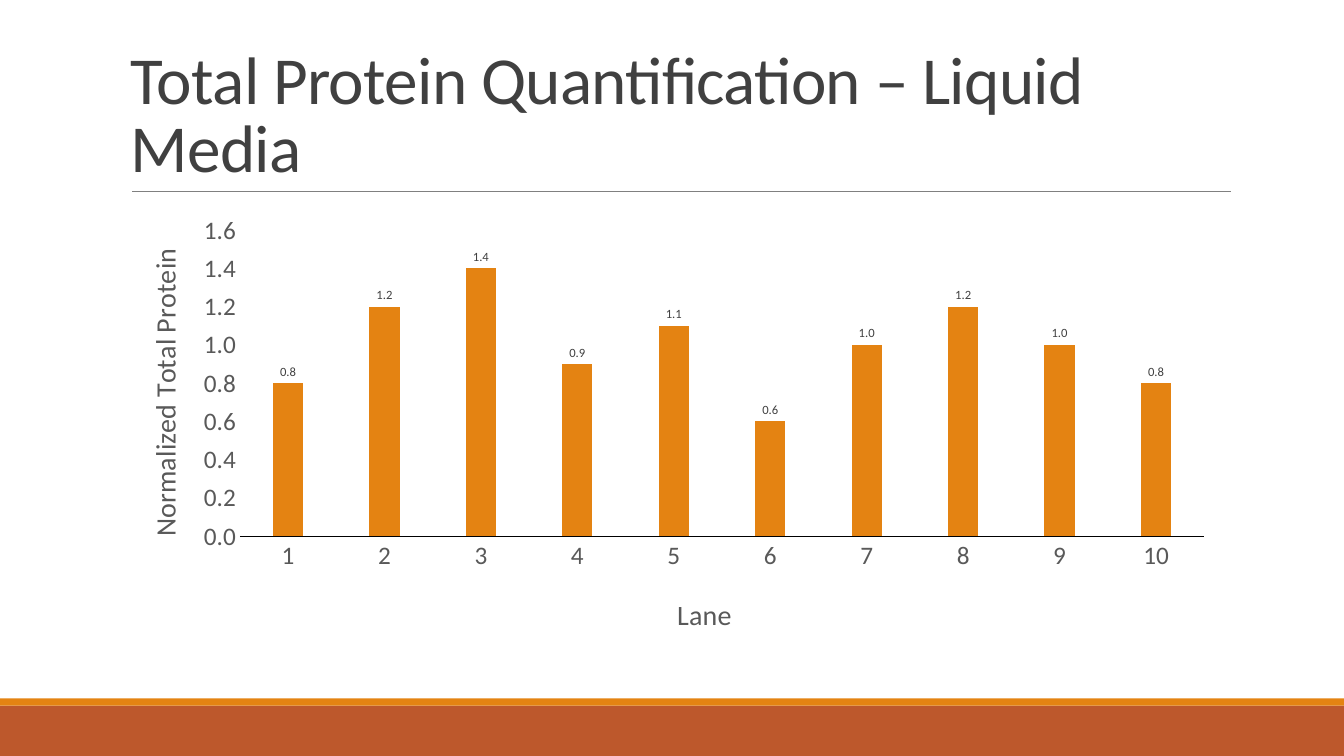
from lxml.etree import SubElement
from pptx import Presentation
from pptx.chart.data import CategoryChartData
from pptx.dml.color import RGBColor
from pptx.enum.chart import XL_CHART_TYPE, XL_LABEL_POSITION, XL_TICK_MARK
from pptx.enum.shapes import MSO_CONNECTOR, MSO_SHAPE
from pptx.enum.text import MSO_ANCHOR
from pptx.oxml import parse_xml
from pptx.oxml.ns import nsdecls, qn
from pptx.util import Cm, Pt

COLORS = {
    "rust": "BD582C",
    "orange": "E48312",
    "rule": "808080",
    "title": "404040",
    "axis": "595959",
    "black": "000000",
}
LANES = [0.8, 1.2, 1.4, 0.9, 1.1, 0.6, 1.0, 1.2, 1.0, 0.8]


def color(name):
    return RGBColor.from_string(COLORS[name])


def style(font, size, name):
    font.name = "Calibri"
    font.size = Pt(size)
    font.bold = False
    font.color.rgb = color(name)


def write(frame, text, size=18, tint="axis", spacing=None, track=None):
    para = frame.paragraphs[0]
    if spacing:
        para.line_spacing = spacing
    run = para.add_run()
    run.text = text
    style(run.font, size, tint)
    if track:
        run.font._element.set("spc", str(track))


def place(node, x, y, w=None, h=None):
    old = node.find(qn("c:layout"))
    if old is not None:
        node.remove(old)
    layout = parse_xml(f"<c:layout {nsdecls('c')}/>")
    manual = SubElement(layout, qn("c:manualLayout"))
    parts = {"xMode": "edge", "yMode": "edge", "x": x, "y": y, "w": w, "h": h}
    if w:
        parts = {"layoutTarget": "inner", **parts}
    for key, value in parts.items():
        if value is not None:
            SubElement(manual, qn(f"c:{key}")).set("val", str(value))
    text = node.find(qn("c:tx"))
    node.insert(0 if text is None else 1, layout)


class Deck:
    def __init__(self, width, height):
        self.file = Presentation()
        self.file.slide_width = Cm(width)
        self.file.slide_height = Cm(height)
        self.slide = self.file.slides.add_slide(self.file.slide_layouts[6])
        self.shapes = self.slide.shapes

    def band(self, box, tint):
        bar = self.shapes.add_shape(MSO_SHAPE.RECTANGLE, *map(Cm, box))
        bar.shadow.inherit = False
        bar.fill.solid()
        bar.fill.fore_color.rgb = color(tint)
        bar.line.fill.background()

    def rule(self, ends, tint, width):
        line = self.shapes.add_connector(MSO_CONNECTOR.STRAIGHT, *map(Cm, ends))
        line.line.color.rgb = color(tint)
        line.line.width = Pt(width)
        SubElement(line._element.spPr, qn("a:effectLst"))

    def text(self, box, text, **format):
        frame = self.shapes.add_textbox(*map(Cm, box)).text_frame
        frame.word_wrap = True
        frame.vertical_anchor = MSO_ANCHOR.BOTTOM
        write(frame, text, **format)

    def axis(self, axis, title, spot, turn=0):
        axis.has_major_gridlines = False
        axis.major_tick_mark = XL_TICK_MARK.NONE
        axis.minor_tick_mark = XL_TICK_MARK.NONE
        style(axis.tick_labels.font, 18, "axis")
        frame = axis.axis_title.text_frame
        write(frame, title, size=20)
        frame._txBody.bodyPr.set("rot", str(turn * 60000))
        place(axis.axis_title._element, *spot)

    def chart(self, box, values):
        data = CategoryChartData(number_format="0.0")
        data.categories = [str(n) for n in range(1, len(values) + 1)]
        data.add_series("Series 1", values)
        chart = self.shapes.add_chart(
            XL_CHART_TYPE.COLUMN_CLUSTERED, *map(Cm, box), data
        ).chart
        chart.has_legend = False
        chart.has_title = False
        style(chart.font, 10, "black")
        place(chart._chartSpace.chart.plotArea, 0.11, 0.06, 0.87, 0.69)

        lane, level = chart.category_axis, chart.value_axis
        self.axis(lane, "Lane", (0.5, 0.87))
        self.axis(level, "Normalized Total Protein", (0.02, 0.09), turn=-90)
        lane.format.line.color.rgb = color("black")
        lane.format.line.width = Pt(0.75)
        level.format.line.fill.background()
        level.minimum_scale = 0
        level.maximum_scale = 1.6
        level.major_unit = 0.2
        level.tick_labels.number_format = "0.0"
        level.tick_labels.number_format_is_linked = False

        plot = chart.plots[0]
        plot.vary_by_categories = False
        plot.gap_width = 219
        plot.overlap = -27
        fill = plot.series[0].format.fill
        fill.solid()
        fill.fore_color.rgb = color("orange")
        labels = plot.series[0].data_labels
        labels.show_value = True
        labels.position = XL_LABEL_POSITION.OUTSIDE_END
        labels.number_format = "0.0"
        labels.number_format_is_linked = False
        style(labels.font, 9, "title")


def main():
    deck = Deck(33.87, 19.05)
    deck.band((0, 17.78, 33.87, 1.27), "rust")
    deck.band((0, 17.6, 33.87, 0.18), "orange")
    deck.rule((3.33, 4.83, 31.01, 4.83), "rule", 0.5)
    deck.text(
        (3.05, 0.79, 27.94, 4.04),
        "Total Protein Quantification – Liquid Media",
        size=48, tint="title", spacing=0.85, track=-50,
    )
    deck.chart((2.97, 5.13, 27.94, 11.18), LANES)
    deck.file.save("out.pptx")


if __name__ == "__main__":
    main()
